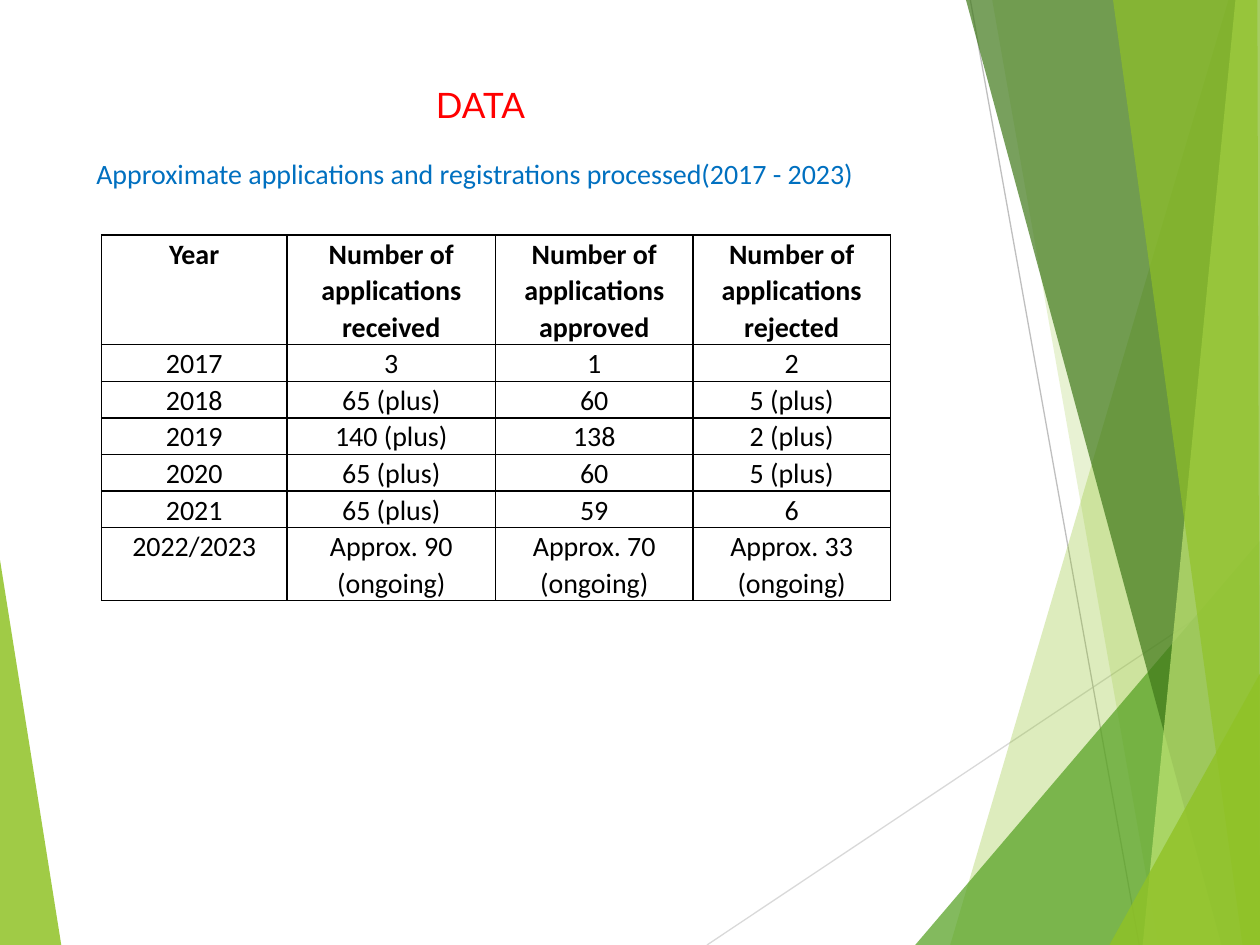
from lxml import etree
from pptx import Presentation
from pptx.dml.color import RGBColor
from pptx.enum.shapes import MSO_CONNECTOR
from pptx.enum.text import MSO_ANCHOR, PP_ALIGN
from pptx.oxml.ns import qn
from pptx.util import Pt

STRAIGHT = MSO_CONNECTOR.STRAIGHT
TOP = MSO_ANCHOR.TOP
CENTER = PP_ALIGN.CENTER

BLACK = RGBColor(0x00, 0x00, 0x00)
RED = RGBColor(0xFF, 0x00, 0x00)
BLUE = RGBColor(0x00, 0x70, 0xC0)
LIME = RGBColor(0x90, 0xC2, 0x26)
GREEN = RGBColor(0x54, 0xA0, 0x21)
DARK_GREEN = RGBColor(0x3F, 0x78, 0x19)
PALE_LIME = RGBColor(0xC0, 0xE4, 0x74)
LIGHT_GREY = RGBColor(0xD9, 0xD9, 0xD9)
GREY = RGBColor(0xBF, 0xBF, 0xBF)

WIDTH, HEIGHT = 720, 540
BOTTOM_LEFT = (0, HEIGHT)
BOTTOM_RIGHT = (WIDTH, HEIGHT)
RIGHT_SIDE = (BOTTOM_RIGHT, (WIDTH, 0))

LEFT_WEDGE = ((0, 320), (35, HEIGHT), BOTTOM_LEFT)
RIGHT_BANDS = (
    (((702, 0), (543, HEIGHT), *RIGHT_SIDE), LIME, 30),
    (((567, 0), (662, HEIGHT), *RIGHT_SIDE), LIME, 20),
    (((523, HEIGHT), (WIDTH, 309), BOTTOM_RIGHT), GREEN, 72),
    (((552, 0), (698, HEIGHT), *RIGHT_SIDE), DARK_GREEN, 70),
    (((706, 0), (653, HEIGHT), *RIGHT_SIDE), PALE_LIME, 70),
    (((636, 0), (710, HEIGHT), BOTTOM_RIGHT, (718.5, 0)), LIME, 65),
    (((634, HEIGHT), (WIDTH, 385), BOTTOM_RIGHT), LIME, 80),
)

APPLICATIONS = (
    ("Year", "Number of applications received",
     "Number of applications approved", "Number of applications rejected"),
    ("2017", "3", "1", "2"),
    ("2018", "65 (plus)", "60", "5 (plus)"),
    ("2019", "140 (plus)", "138", "2 (plus)"),
    ("2020", "65 (plus)", "60", "5 (plus)"),
    ("2021", "65 (plus)", "59", "6"),
    ("2022/2023", "Approx. 90 (ongoing)", "Approx. 70 (ongoing)",
     "Approx. 33 (ongoing)"),
)
COLUMN_WIDTHS = (106, 119.2, 112.8, 112.8)
LINE_HEIGHT = 20.9
ROW_LINES = (3, 1, 1, 1, 1, 1, 2)


class SlideBuilder:
    title_font = "Lato"
    body_font = "Calibri"
    body_size = 16

    def __init__(self, slide):
        self.slide = slide

    def band(self, points, color, opacity):
        start, *others = [(Pt(x), Pt(y)) for x, y in points]
        outline = self.slide.shapes.build_freeform(*start)
        outline.add_line_segments(others)
        band = outline.convert_to_shape()
        band.shadow.inherit = False
        band.fill.solid()
        band.fill.fore_color.rgb = color
        band.line.fill.background()
        solid = band.fill._xPr.find(qn("a:solidFill"))
        etree.SubElement(solid[0], qn("a:alpha"), val=str(opacity * 1000))

    def line(self, start, end, color):
        ends = [Pt(value) for value in (*start, *end)]
        line = self.slide.shapes.add_connector(STRAIGHT, *ends)
        line.line.color.rgb = color
        line.line.width = Pt(0.75)
        etree.SubElement(line._element.spPr, qn("a:effectLst"))

    def format_run(self, run, font, size, color, bold=False):
        run.font.name = font
        run.font.size = Pt(size)
        run.font.color.rgb = color
        run.font.bold = bold

    def text(self, wording, box, font, size, color, wrap=True):
        frame = self.slide.shapes.add_textbox(*map(Pt, box)).text_frame
        frame.word_wrap = wrap
        frame.vertical_anchor = TOP
        frame.text = wording
        self.format_run(frame.paragraphs[0].runs[0], font, size, color)

    def border_cell(self, cell):
        properties = cell._tc.get_or_add_tcPr()
        for index, side in enumerate(("lnL", "lnR", "lnT", "lnB")):
            border = etree.Element(qn(f"a:{side}"), w=str(Pt(1)))
            fill = etree.SubElement(border, qn("a:solidFill"))
            etree.SubElement(fill, qn("a:srgbClr"), val=str(BLACK))
            properties.insert(index, border)

    def cell(self, cell, wording, bold):
        cell.fill.background()
        cell.margin_left = cell.margin_right = Pt(5.4)
        cell.margin_top = cell.margin_bottom = 0
        cell.text = wording
        paragraph = cell.text_frame.paragraphs[0]
        paragraph.alignment = CENTER
        paragraph.line_spacing = 1.07
        paragraph.space_after = Pt(8)
        self.format_run(paragraph.runs[0], self.body_font, self.body_size,
                        BLACK, bold)
        self.border_cell(cell)

    def table(self, rows, left, top, widths, heights):
        table = self.slide.shapes.add_table(
            len(rows), len(widths), Pt(left), Pt(top),
            Pt(sum(widths)), Pt(sum(heights))).table
        table.first_row = False
        table.horz_banding = False
        for column, width in zip(table.columns, widths):
            column.width = Pt(width)
        for row_index, (row, height) in enumerate(zip(rows, heights)):
            table.rows[row_index].height = Pt(height)
            for column_index, wording in enumerate(row):
                self.cell(table.cell(row_index, column_index), wording,
                          bold=row_index == 0)


def main():
    presentation = Presentation()
    presentation.slide_width = Pt(WIDTH)
    presentation.slide_height = Pt(HEIGHT)
    builder = SlideBuilder(
        presentation.slides.add_slide(presentation.slide_layouts[6]))

    builder.band(LEFT_WEDGE, LIME, 85)
    builder.line((404, HEIGHT), (WIDTH, 329), LIGHT_GREY)
    builder.line((554.5, 0), (651, HEIGHT), GREY)
    for points, color, opacity in RIGHT_BANDS:
        builder.band(points, color, opacity)

    builder.text("DATA", (242, 44, 236, 60), builder.title_font, 20, RED)
    builder.table(APPLICATIONS, 58, 134.3, COLUMN_WIDTHS,
                  [lines * LINE_HEIGHT for lines in ROW_LINES])
    builder.text(
        "Approximate applications and registrations processed(2017 - 2023)",
        (48, 86, 453, 48), builder.body_font, builder.body_size, BLUE,
        wrap=False)

    presentation.save("out.pptx")


if __name__ == "__main__":
    main()
